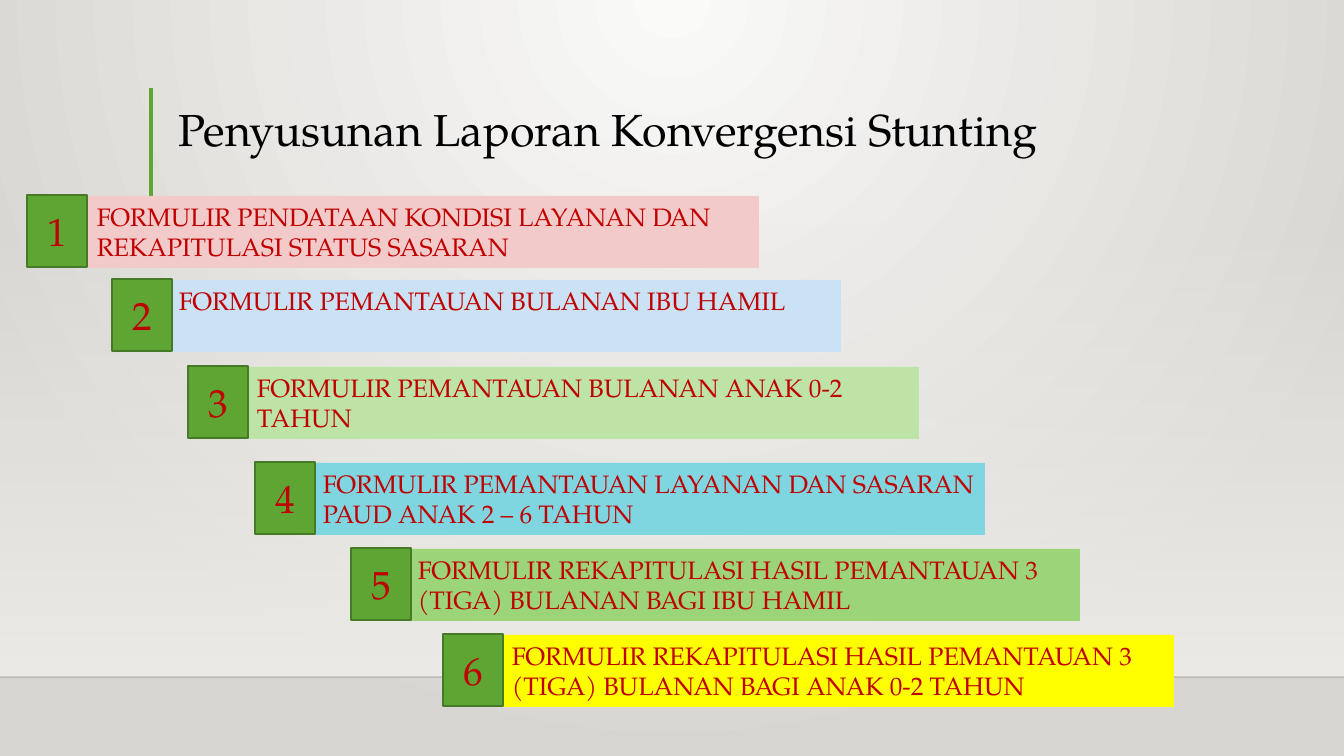
"""Builds the slide on the six forms of the stunting convergence report."""
import pptx
import pptx.util
import pptx.dml.color
import pptx.enum.shapes
import pptx.enum.text
import pptx.oxml
import pptx.oxml.ns

EMU_PER_PX = 914400 / 100.8
SLIDE_W, SLIDE_H = 1344, 756
BAR_W, BADGE_W, ROW_H = 672, 60, 72
FONT = "TeX Gyre Pagella"
COLORS = {
    "glow": "FAFAF9", "edge": "D7D5D2", "wall": "EDEBE7", "floor_line": "000001",
    "green": "5FA534", "dark_green": "467A26", "title": "000000", "text": "C00000",
    "pink": "F3CACA", "blue": "CAE2F3", "light_green": "BDE3A6",
    "cyan": "7FD6E0", "mid_green": "9CD579", "yellow": "FFFF00",
}
FORMS = [
    (27, 87, 196, "pink", "FORMULIR PENDATAAN KONDISI LAYANAN DAN REKAPITULASI STATUS SASARAN"),
    (112, 169, 280, "blue", "FORMULIR PEMANTAUAN BULANAN IBU HAMIL"),
    (188, 247, 367, "light_green", "FORMULIR PEMANTAUAN BULANAN ANAK 0-2 TAHUN"),
    (255, 313, 463, "cyan", "FORMULIR PEMANTAUAN LAYANAN DAN SASARAN PAUD ANAK 2 – 6 TAHUN"),
    (351, 408, 549, "mid_green", "FORMULIR REKAPITULASI HASIL PEMANTAUAN 3 (TIGA) BULANAN BAGI IBU HAMIL"),
    (443, 502, 635, "yellow", "FORMULIR REKAPITULASI HASIL PEMANTAUAN 3 (TIGA) BULANAN BAGI ANAK 0-2 TAHUN"),
]


def px(length):
    """Convert pixels to EMU."""
    return pptx.util.Emu(round(length * EMU_PER_PX))


def rgb(name):
    """Look up a colour by name."""
    return pptx.dml.color.RGBColor.from_string(COLORS[name])


def set_gradient(fill, start, end):
    """Give a fill a two-stop gradient."""
    fill.gradient()
    for stop, name in zip(fill.gradient_stops, (start, end)):
        stop.color.rgb = rgb(name)


def set_alpha(color_element, percent):
    """Set the opacity of a colour element."""
    alpha = pptx.oxml.parse_xml(
        f'<a:alpha {pptx.oxml.ns.nsdecls("a")} val="{percent * 1000}"/>')
    color_element.append(alpha)


def paint_background(slide):
    """Paint the radial glow that starts at the top centre."""
    set_gradient(slide.background.fill, "glow", "edge")
    gradient = slide.element.xpath(".//p:bgPr/a:gradFill")[0]
    for linear in gradient.xpath("a:lin"):
        gradient.remove(linear)
    gradient.append(pptx.oxml.parse_xml(
        f'<a:path {pptx.oxml.ns.nsdecls("a")} path="circle">'
        '<a:fillToRect l="43000" t="0" r="43000" b="100000"/></a:path>'))


def add_box(slide, left, top, width, height):
    """Add a rectangle without shadow or outline."""
    box = slide.shapes.add_shape(
        pptx.enum.shapes.MSO_SHAPE.RECTANGLE, px(left), px(top), px(width), px(height))
    box.shadow.inherit = False
    box.line.fill.background()
    return box


def add_wall(slide):
    """Add the wall that fades in towards the floor."""
    wall = add_box(slide, 0, 222, SLIDE_W, 455)
    set_gradient(wall.fill, "wall", "wall")
    wall.fill.gradient_angle = 270
    set_alpha(wall.element.xpath(".//a:gs[1]/a:srgbClr")[0], 0)


def add_rule(slide, start, end, color, points):
    """Add a straight line and return it."""
    rule = slide.shapes.add_connector(
        pptx.enum.shapes.MSO_CONNECTOR.STRAIGHT, *map(px, start + end))
    rule.line.color.rgb = rgb(color)
    rule.line.width = pptx.util.Pt(points)
    rule.element.spPr.append(pptx.oxml.parse_xml(
        f'<a:effectLst {pptx.oxml.ns.nsdecls("a")}/>'))
    return rule


def write(shape, text, size, color, anchor, align):
    """Write one wrapped paragraph into a shape and return it."""
    frame = shape.text_frame
    frame.word_wrap = True
    frame.vertical_anchor = anchor
    paragraph = frame.paragraphs[0]
    paragraph.alignment = align
    run = paragraph.add_run()
    run.text = text
    run.font.name = FONT
    run.font.size = pptx.util.Pt(size)
    run.font.color.rgb = rgb(color)
    return paragraph


def add_title(slide, text):
    """Add the slide title."""
    title = slide.shapes.add_textbox(px(169), px(89), px(1049), px(72))
    paragraph = write(title, text, 32, "title", pptx.enum.text.MSO_ANCHOR.BOTTOM,
                      pptx.enum.text.PP_ALIGN.LEFT)
    paragraph.line_spacing = 0.9


def add_form(slide, number, badge_left, bar_left, top, color, text):
    """Add a form's coloured bar and its numbered badge."""
    bar = add_box(slide, bar_left, top, BAR_W, ROW_H)
    bar.fill.solid()
    bar.fill.fore_color.rgb = rgb(color)
    write(bar, text, 18, "text", pptx.enum.text.MSO_ANCHOR.TOP,
          pptx.enum.text.PP_ALIGN.LEFT)
    badge = add_box(slide, badge_left, top - 1, BADGE_W, ROW_H)
    badge.fill.solid()
    badge.fill.fore_color.rgb = rgb("green")
    badge.line.color.rgb = rgb("dark_green")
    badge.line.width = pptx.util.Pt(1.25)
    write(badge, str(number), 28, "text", pptx.enum.text.MSO_ANCHOR.MIDDLE,
          pptx.enum.text.PP_ALIGN.CENTER)


def main():
    """Build and save the slide."""
    deck = pptx.Presentation()
    deck.slide_width, deck.slide_height = px(SLIDE_W), px(SLIDE_H)
    slide = deck.slides.add_slide(deck.slide_layouts[6])
    paint_background(slide)
    add_wall(slide)
    floor = add_rule(slide, (0, 677), (SLIDE_W, 677), "floor_line", 1)
    set_alpha(floor.element.xpath(".//a:ln//a:srgbClr")[0], 20)
    add_rule(slide, (151, 88), (151, 206), "green", 3)
    add_title(slide, "Penyusunan Laporan Konvergensi Stunting")
    for number, form in enumerate(FORMS, 1):
        add_form(slide, number, *form)
    deck.save("out.pptx")


if __name__ == "__main__":
    main()
